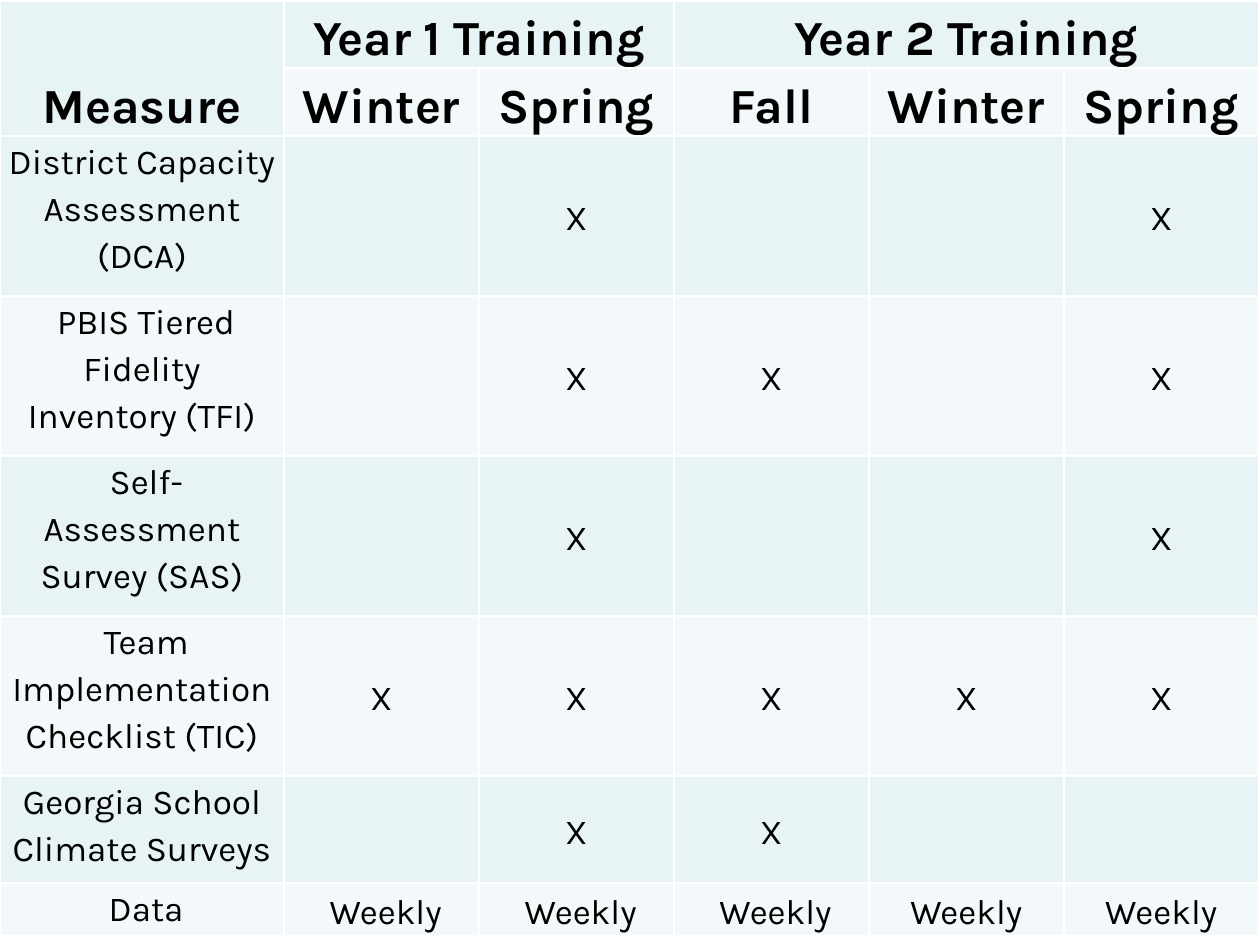
from lxml.etree import SubElement as Sub
from pptx import Presentation
from pptx.dml.color import RGBColor as RGB
from pptx.enum.text import MSO_ANCHOR as Anchor, PP_ALIGN as Align
from pptx.oxml.ns import qn
from pptx.util import Pt

PX = 914400 / 126


def px(n):
    return round(n * PX)


def put(cell, text, size=20, bold=False, anchor=Anchor.MIDDLE, fill="F3F9FA", top=1):
    cell.margin_left = cell.margin_right = px(8)
    cell.margin_top = cell.margin_bottom = 0
    cell.vertical_anchor = anchor
    props = cell._tc.get_or_add_tcPr()
    for side, width in (("L", 1), ("R", 1), ("T", top), ("B", 1)):
        line = Sub(props, qn(f"a:ln{side}"), w=str(Pt(width)))
        Sub(Sub(line, qn("a:solidFill")), qn("a:srgbClr"), val="FFFFFF")
    cell.fill.solid()
    cell.fill.fore_color.rgb = RGB.from_string(fill)
    if text:
        par = cell.text_frame.paragraphs[0]
        par.alignment = Align.CENTER
        par.line_spacing = 1.15
        run = par.add_run()
        run.text = text
        run.font.name = "Karla"
        run.font.size = Pt(size)
        run.font.bold = bold
        run.font.color.rgb = RGB.from_string("000000")


heads = [
    ["Measure", "Year 1 Training", "", "Year 2 Training", "", ""],
    ["", "Winter", "Spring", "Fall", "Winter", "Spring"],
]
body = [
    ["District Capacity Assessment (DCA)", "", "X", "", "", "X"],
    [" PBIS Tiered Fidelity Inventory (TFI)", "", "X", "X", "", "X"],
    [" Self-Assessment Survey (SAS)", "", "X", "", "", "X"],
    [" Team Implementation Checklist (TIC)", "X", "X", "X", "X", "X"],
    ["Georgia School Climate Surveys", "", "X", "X", "", ""],
    [" Data", " Weekly", " Weekly", " Weekly", "Weekly", "Weekly"],
]
wide = [284] + [195] * 5
high = [68] * 2 + [160] * 4 + [107, 53]

deck = Presentation()
deck.slide_width, deck.slide_height = px(1260), px(945)
slide = deck.slides.add_slide(deck.slide_layouts[6])
grid = slide.shapes.add_table(
    len(high), len(wide), 0, 0, px(sum(wide)), px(sum(high))
).table
for col, w in zip(grid.columns, wide):
    col.width = px(w)
for row, h in zip(grid.rows, high):
    row.height = px(h)

for r, words in enumerate(heads + body):
    for c, text in enumerate(words):
        head = r < len(heads)
        if head:
            anchor = Anchor.BOTTOM
        else:
            anchor = Anchor.MIDDLE if c else Anchor.TOP
        put(
            grid.cell(r, c),
            text,
            size=28 if head else 20,
            bold=head,
            anchor=anchor,
            fill="F3F9FA" if r % 2 else "E7F3F4",
            top=1 if r else 3,
        )

for start, end in (((0, 0), (1, 0)), ((0, 1), (0, 2)), ((0, 3), (0, 5))):
    grid.cell(*start).merge(grid.cell(*end))

deck.save("out.pptx")
